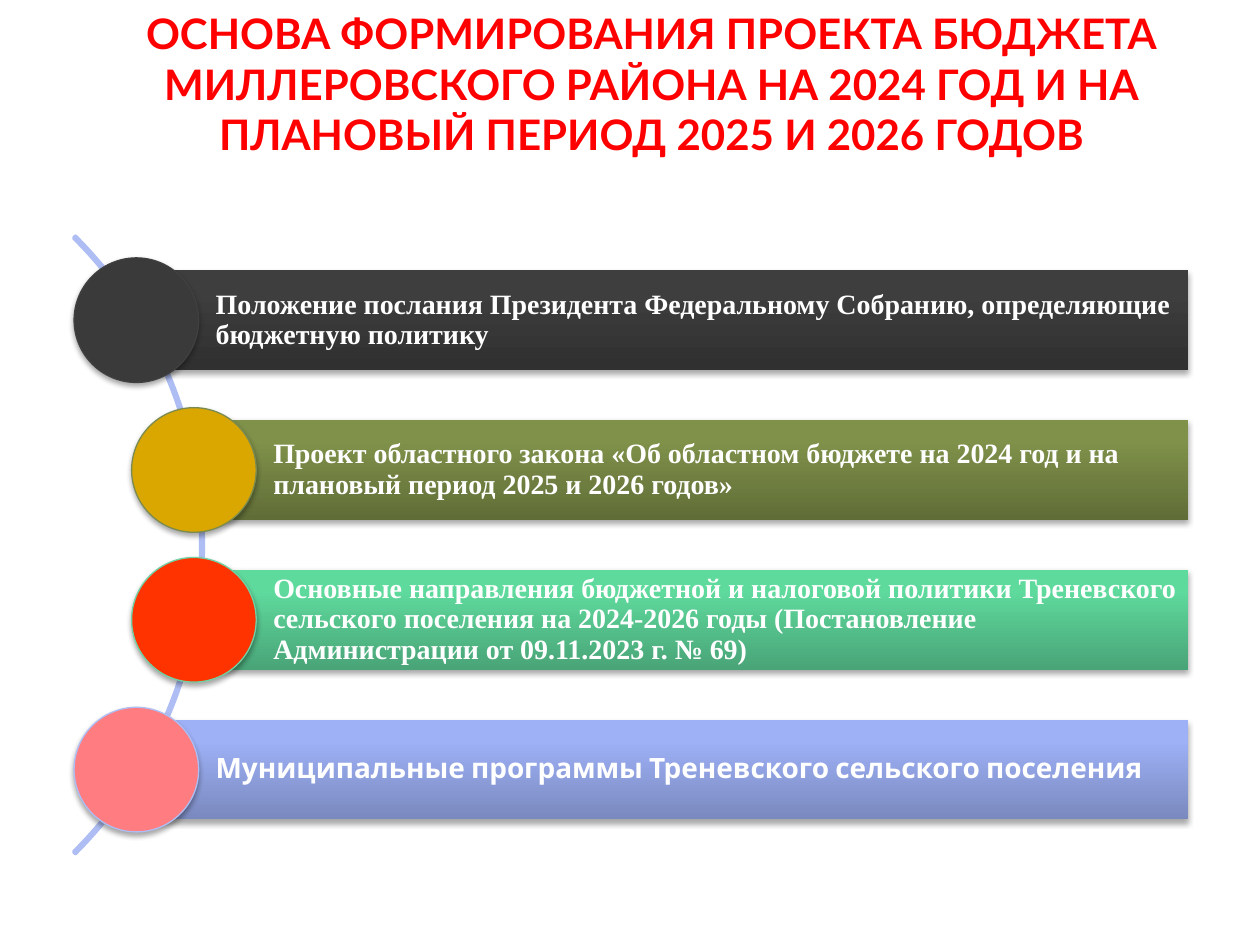
from lxml import etree
from pptx import Presentation
from pptx.dml.color import RGBColor
from pptx.enum.shapes import MSO_SHAPE
from pptx.enum.text import MSO_ANCHOR, MSO_AUTO_SIZE, PP_ALIGN
from pptx.oxml import parse_xml
from pptx.oxml.ns import nsdecls
from pptx.util import Cm, Pt

WHITE = RGBColor(0xFF, 0xFF, 0xFF)
RED = RGBColor(0xFF, 0x00, 0x00)
ARC_BLUE = RGBColor(0xAE, 0xBE, 0xF4)

SERIF = "Times New Roman"
TITLE = ("ОСНОВА ФОРМИРОВАНИЯ ПРОЕКТА БЮДЖЕТА МИЛЛЕРОВСКОГО РАЙОНА "
         "НА 2024 ГОД И НА ПЛАНОВЫЙ ПЕРИОД 2025 И 2026 ГОДОВ")

# text, font, indent from the left, bar bottom, bar top, circle fill, circle line
ITEMS = [
    ("Положение послания Президента Федеральному Собранию, определяющие "
     "бюджетную политику", SERIF, Cm(0),
     RGBColor(0x30, 0x30, 0x30), RGBColor(0x3E, 0x3E, 0x3E),
     RGBColor(0x3A, 0x3A, 0x3A), RGBColor(0x40, 0x40, 0x40)),
    ("Проект областного закона «Об областном бюджете на 2024 год и на "
     "плановый период 2025 и 2026 годов»", SERIF, Cm(1.16),
     RGBColor(0x60, 0x6D, 0x37), RGBColor(0x80, 0x91, 0x4A),
     RGBColor(0xDA, 0xA6, 0x00), RGBColor(0x7B, 0x8B, 0x50)),
    ("Основные направления бюджетной и налоговой политики Треневского "
     "сельского поселения на 2024-2026 годы (Постановление Администрации "
     "от 09.11.2023 г. № 69)", SERIF, Cm(1.16),
     RGBColor(0x49, 0xA4, 0x77), RGBColor(0x5F, 0xDA, 0x9D),
     RGBColor(0xFF, 0x33, 0x00), RGBColor(0x71, 0xD1, 0xA2)),
    ("Муниципальные программы Треневского сельского поселения", "Cabin", Cm(0),
     RGBColor(0x7A, 0x89, 0xBE), RGBColor(0x9E, 0xB1, 0xF7),
     RGBColor(0xFF, 0x7C, 0x80), RGBColor(0xAE, 0xBE, 0xF4)),
]


def add_soft_shadow(sp):
    sp._element.spPr.append(parse_xml(
        f'<a:effectLst {nsdecls("a")}>'
        '<a:outerShdw blurRad="40000" dist="23000" dir="5400000" rotWithShape="0">'
        '<a:srgbClr val="000000"><a:alpha val="35000"/></a:srgbClr>'
        '</a:outerShdw></a:effectLst>'))


def fill_title(s, left, top, width, height):
    sp = s.shapes.title
    sp.left, sp.top, sp.width, sp.height = left, top, width, height
    tf = sp.text_frame
    tf.auto_size = MSO_AUTO_SIZE.NONE
    tf.vertical_anchor = MSO_ANCHOR.MIDDLE
    tf.margin_top, tf.margin_bottom = 0, Cm(1)
    p = tf.paragraphs[0]
    p.text = TITLE
    p.alignment = PP_ALIGN.CENTER
    p.font.name, p.font.size, p.font.bold = "Lato", Pt(24), True
    p.font.color.rgb = RED


def add_arc(s, right, middle, size):
    """Draw the right-hand quarter of a thin ring."""
    sp = s.shapes.add_shape(MSO_SHAPE.BLOCK_ARC, right - size,
                            middle - size // 2, size, size)
    for i, value in enumerate((189, 27, 0.003)):
        sp.adjustments[i] = value
    sp.shadow.inherit = False
    sp.fill.solid()
    sp.fill.fore_color.rgb = ARC_BLUE
    sp.line.color.rgb = ARC_BLUE
    sp.line.width = Pt(2)


def add_item(s, item, left, top, width, height):
    """Place a bar with its text, and a circle centred on the bar's left edge."""
    text, font, _, dark, light, circle_fill, circle_line = item
    bar = s.shapes.add_shape(MSO_SHAPE.RECTANGLE, left, top, width, height)
    bar.fill.gradient()
    bar.fill.gradient_angle = 90
    for stop, position, color in zip(bar.fill.gradient_stops, (0, 0.8), (dark, light)):
        stop.position = position
        stop.color.rgb = color
    bar.line.fill.background()
    add_soft_shadow(bar)

    tf = bar.text_frame
    tf.word_wrap = True
    tf.vertical_anchor = MSO_ANCHOR.MIDDLE
    tf.margin_left = Cm(1.6)
    tf.margin_top = tf.margin_right = tf.margin_bottom = Cm(0.1)
    p = tf.paragraphs[0]
    p.text = text
    p.alignment = PP_ALIGN.LEFT
    p.line_spacing = 0.9
    p.font.name, p.font.size, p.font.bold = font, Pt(16), True
    p.font.color.rgb = WHITE

    size = int(height * 1.25)
    circle = s.shapes.add_shape(MSO_SHAPE.OVAL, left - size // 2,
                                top + (height - size) // 2, size, size)
    circle.fill.solid()
    circle.fill.fore_color.rgb = circle_fill
    circle.line.color.rgb = circle_line
    circle.line.width = Pt(0.75)
    add_soft_shadow(circle)


def add_list(s, left, top, width, height):
    """Spread the items evenly down the box, along the arc."""
    bar_height = Cm(2.01)
    pitch = (height - bar_height) // (len(ITEMS) - 1)
    add_arc(s, left + Cm(1.35), top + height // 2, Cm(17.6))
    for i, item in enumerate(ITEMS):
        indent = item[2]
        add_item(s, item, left + indent, top + i * pitch, width - indent, bar_height)


def main():
    prs = Presentation()
    prs.slide_width, prs.slide_height = Cm(25.4), Cm(19.05)
    s = prs.slides.add_slide(prs.slide_layouts[5])
    fill_title(s, Cm(1.7), Cm(0.43), Cm(22.86), Cm(3.5))
    add_list(s, Cm(2.75), Cm(5.45), Cm(21.2), Cm(11.07))
    prs.save("out.pptx")


if __name__ == "__main__":
    main()
